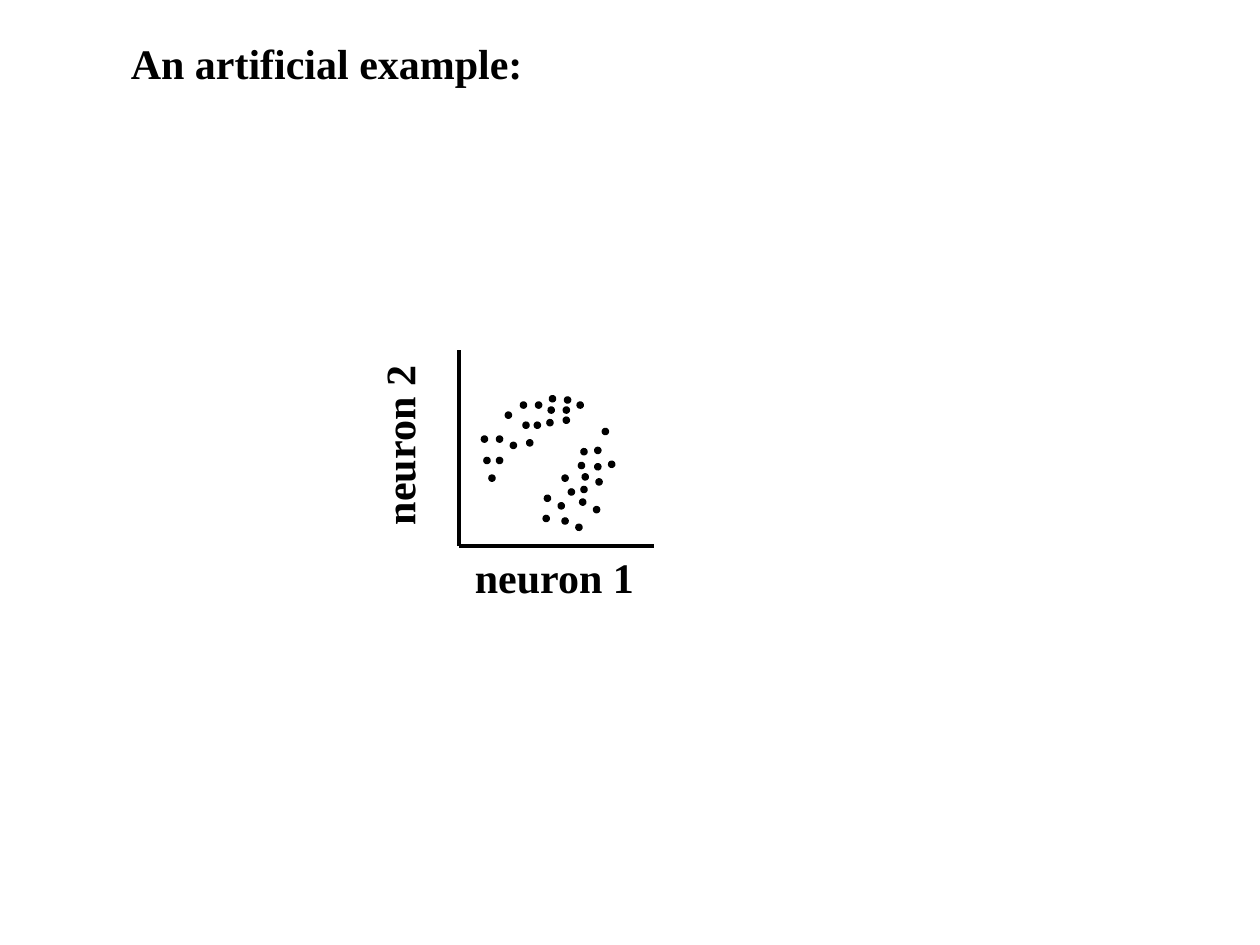
import pptx
import pptx.util
import pptx.dml.color
import pptx.enum.shapes
import pptx.enum.text
import pptx.oxml
import pptx.oxml.ns
from pptx.util import Inches

COLORS = {"ink": "000000", "background": "FFFFFF"}
ink = pptx.dml.color.RGBColor.from_string(COLORS["ink"])

presentation = pptx.Presentation()
presentation.slide_width = Inches(10)
presentation.slide_height = Inches(7.5)
slide = presentation.slides.add_slide(presentation.slide_layouts[6])
slide.background.fill.solid()
slide.background.fill.fore_color.rgb = pptx.dml.color.RGBColor.from_string(COLORS["background"])

labels = [
    ("An artificial example:", 0.94, 0.25, 3.34, 0),
    ("neuron 1", 3.67, 4.33, 1.48, 0),
    ("neuron 2", 2.43, 3.28, 1.47, 270),
]
for text, left, top, width, rotation in labels:
    box = slide.shapes.add_textbox(Inches(left), Inches(top), Inches(width), Inches(0.5))
    box.rotation = rotation
    box.text_frame.word_wrap = False
    box.text_frame.auto_size = pptx.enum.text.MSO_AUTO_SIZE.SHAPE_TO_FIT_TEXT
    run = box.text_frame.paragraphs[0].add_run()
    run.text = text
    run.font.name = "Times New Roman"
    run.font.size = pptx.util.Pt(24)
    run.font.bold = True
    run.font.color.rgb = ink

origin_x, origin_y, axis_length = 3.64, 4.33, 1.55
axes = [
    (origin_x, origin_y - axis_length, origin_x, origin_y),
    (origin_x, origin_y, origin_x + axis_length, origin_y),
]
for ends in axes:
    axis = slide.shapes.add_connector(
        pptx.enum.shapes.MSO_CONNECTOR.STRAIGHT, *[Inches(value) for value in ends])
    axis.line.color.rgb = ink
    axis.line.width = pptx.util.Pt(2.25)
    properties = axis._element.spPr
    properties.append(pptx.oxml.parse_xml(f'<a:effectLst {pptx.oxml.ns.nsdecls("a")}/>'))

upper_cluster = [
    (4.05, 3.51), (4.01, 3.27), (3.94, 3.63), (3.82, 3.46), (3.94, 3.46),
    (3.88, 3.77), (3.84, 3.63), (4.18, 3.49), (4.35, 3.23), (4.25, 3.19),
    (4.24, 3.35), (4.13, 3.19), (4.34, 3.33), (4.15, 3.35), (4.58, 3.19),
    (4.48, 3.15), (4.47, 3.31), (4.36, 3.14), (4.47, 3.23),
]
lower_cluster = [
    (4.59, 3.67), (4.46, 4.11), (4.51, 3.88), (4.32, 3.93), (4.46, 3.77),
    (4.72, 3.55), (4.61, 3.86), (4.62, 3.76), (4.43, 3.99), (4.61, 3.56),
    (4.31, 4.09), (4.72, 3.68), (4.6, 3.96), (4.73, 3.8), (4.78, 3.4),
    (4.57, 4.16), (4.83, 3.66), (4.71, 4.02),
]
dot_size = Inches(0.05)
for left, top in upper_cluster + lower_cluster:
    dot = slide.shapes.add_shape(
        pptx.enum.shapes.MSO_SHAPE.OVAL, Inches(left), Inches(top), dot_size, dot_size)
    dot.rotation = 320.9
    dot.shadow.inherit = False
    dot.fill.solid()
    dot.fill.fore_color.rgb = ink
    dot.line.color.rgb = ink
    dot.line.width = pptx.util.Pt(0.75)

presentation.save("out.pptx")
